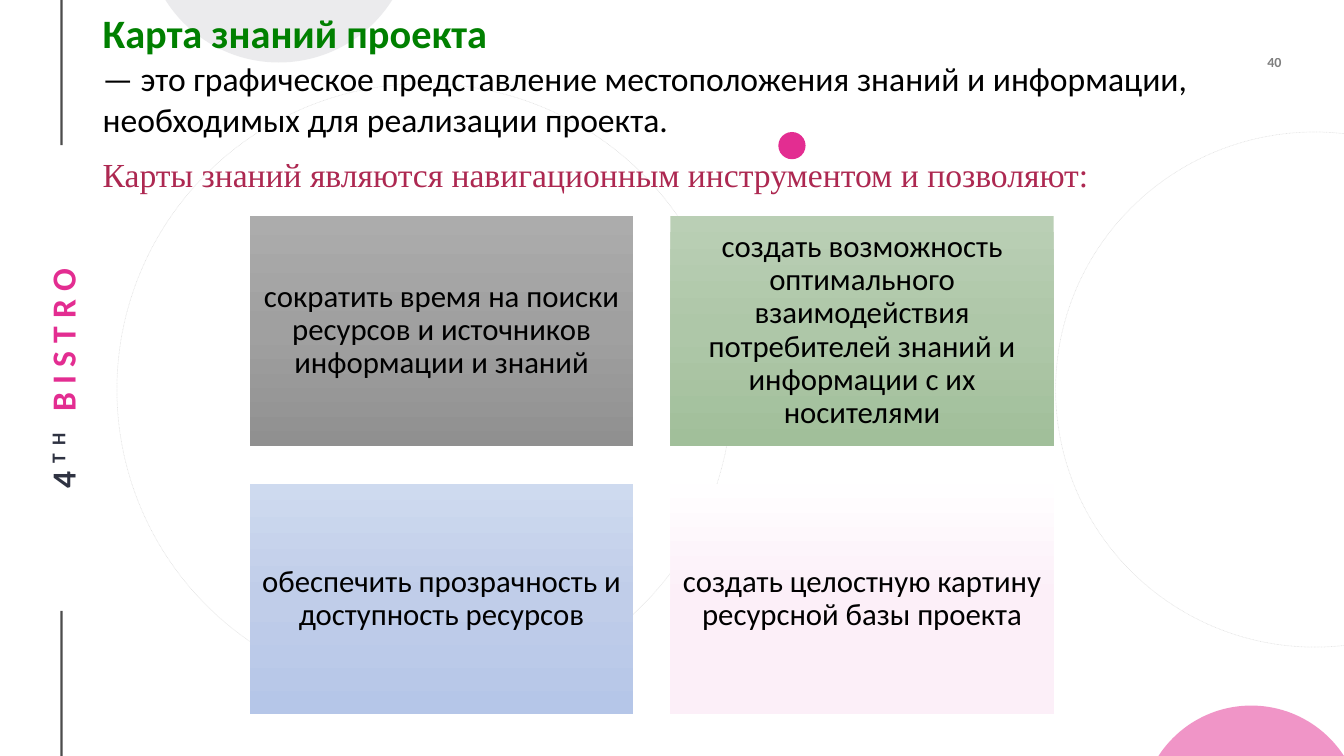
from copy import deepcopy
from math import asin, cos, sin

from lxml import etree
from pptx import Presentation
from pptx.dml.color import RGBColor
from pptx.enum.dml import MSO_LINE
from pptx.enum.shapes import MSO_CONNECTOR, MSO_SHAPE
from pptx.enum.text import MSO_ANCHOR, PP_ALIGN
from pptx.oxml.ns import qn
from pptx.util import Inches, Pt

STRAIGHT = MSO_CONNECTOR.STRAIGHT
OVAL, RECTANGLE = MSO_SHAPE.OVAL, MSO_SHAPE.RECTANGLE
TOP, MIDDLE = MSO_ANCHOR.TOP, MSO_ANCHOR.MIDDLE
LEFT, CENTER, RIGHT = PP_ALIGN.LEFT, PP_ALIGN.CENTER, PP_ALIGN.RIGHT
DOTTED = MSO_LINE.ROUND_DOT

THEME = {
    "sans": "Calibri", "serif": "Times New Roman",
    "black": "000000", "green": "008000", "wine": "AD2851",
    "pink": "E32D91", "navy": "2F3342", "mist": "D8D9DC",
    "title": 28.8, "body": 24, "card": 22, "number": 10,
}

TITLE = "Карта знаний проекта"
DEFINITION = ("— это графическое представление местоположения знаний и информации, "
              "необходимых для реализации проекта.")
LEAD = "Карты знаний являются навигационным инструментом и позволяют:"
PAGE_NUMBER = "40"
# text, colour, baseline in thousandths of a percent
BRAND = [("4", "navy", 0), ("TH ", "navy", 30000), ("BISTRO", "pink", 0)]
# text, gradient from top to bottom
CARDS = [
    ("сократить время на поиски ресурсов и источников информации и знаний",
     ("ACACAC", "A0A0A0", "909090")),
    ("создать возможность оптимального взаимодействия потребителей знаний и "
     "информации с их носителями", ("BACFB5", "AEC7A8", "A1BF9A")),
    ("обеспечить прозрачность и доступность ресурсов",
     ("CEDAEF", "C0CDE9", "B5C6E8")),
    ("создать целостную картину ресурсной базы проекта",
     ("FFFEFF", "FCEFF8", "FBEDF7")),
]
CARD_LEFT, CARD_TOP, CARD_WIDTH, CARD_HEIGHT = 2.48, 2.14, 3.8, 2.28
COLUMN_STEP, ROW_STEP, COLUMNS = 4.17, 2.66, 2
RULE_X, RULE_SPANS = 0.61, [(0, 1.44), (6.06, 7.5)]
RINGS = [(10.47, 1.31, 5.14, 5.11), (1.16, 0.83, 6.1, 6.07)]
DOT = (7.72, 1.31, 0.27, 0.27)
# chord left, chord y, chord width, signed height (negative rises), colour
DOMES = [(11.49, 7.5, 1.84, -0.5, "pink"), (1.64, 0, 2.25, 0.62, "mist")]


def rgb(name):
    return RGBColor.from_string(THEME.get(name, name))


def set_opacity(element, percent):
    color = next(element.iter(qn("a:srgbClr")))
    etree.SubElement(color, qn("a:alpha"), val=str(percent * 1000))


def add_shape(page, kind, frame):
    shape = page.shapes.add_shape(kind, *map(Inches, frame))
    shape.shadow.inherit = False
    shape.line.fill.background()
    return shape


def set_text(shape, runs, size, color, align=LEFT, anchor=TOP, margins=None,
             font="sans", bold=False, spacing=None):
    """Fill one paragraph and return its runs."""
    box = shape.text_frame
    box.word_wrap = True
    box.vertical_anchor = anchor
    if margins is not None:
        box.margin_left = box.margin_right = Inches(margins)
        box.margin_top = box.margin_bottom = Inches(margins)
    para = box.paragraphs[0]
    para.alignment = align
    para.line_spacing = spacing
    para.font.name, para.font.size = THEME[font], Pt(THEME[size])
    para.font.bold, para.font.color.rgb = bold, rgb(color)
    spans = []
    for text in runs:
        span = para.add_run()
        span.text = text
        spans.append(span)
    return spans


def add_text(page, frame, runs, *args, **options):
    box = page.shapes.add_textbox(*map(Inches, frame))
    return box, set_text(box, runs, *args, **options)


def add_rules(page):
    for top, bottom in RULE_SPANS:
        rule = page.shapes.add_connector(
            STRAIGHT, Inches(RULE_X), Inches(top), Inches(RULE_X), Inches(bottom))
        rule.line.width = Pt(1.5)
        rule.line.color.rgb = rgb("black")
        properties = rule._element.spPr
        set_opacity(properties, 70)
        etree.SubElement(properties, qn("a:effectLst"))


def add_brand(page):
    box, spans = add_text(page, (-1.69, 3.53, 4.61, 0.45), [part[0] for part in BRAND],
                          "body", "navy", CENTER, MIDDLE, 0.02, bold=True)
    box.rotation = 270
    for span, (_, color, baseline) in zip(spans, BRAND):
        span.font.color.rgb = rgb(color)
        properties = span._r.get_or_add_rPr()
        properties.set("spc", "600")
        properties.set("baseline", str(baseline))


def add_circles(page):
    for frame in RINGS:
        ring = add_shape(page, OVAL, frame)
        ring.fill.background()
        ring.line.color.rgb = rgb("black")
        ring.line.width = Pt(0.5)
        ring.line.dash_style = DOTTED
        set_opacity(ring._element.spPr, 10)
    dot = add_shape(page, OVAL, DOT)
    dot.fill.solid()
    dot.fill.fore_color.rgb = rgb("pink")


def add_dome(page, left, chord_y, width, height, color, steps=48):
    """Draw the part of a circle cut off by a slide edge."""
    rise = abs(height)
    radius = (width ** 2 / 4 + rise ** 2) / (2 * rise)
    half_angle = asin(width / 2 / radius)
    direction = height / rise
    points = []
    for step in range(steps + 1):
        angle = half_angle * (2 * step / steps - 1)
        depth = radius * (cos(angle) - cos(half_angle))
        points.append((Inches(left + width / 2 + radius * sin(angle)),
                       Inches(chord_y + direction * depth)))
    builder = page.shapes.build_freeform(*points[0])
    builder.add_line_segments(points[1:], close=True)
    dome = builder.convert_to_shape()
    dome.shadow.inherit = False
    dome.line.fill.background()
    dome.fill.solid()
    dome.fill.fore_color.rgb = rgb(color)
    set_opacity(dome._element.spPr, 50)


def add_card(page, index, text, colors):
    row, column = divmod(index, COLUMNS)
    card = add_shape(page, RECTANGLE, (CARD_LEFT + column * COLUMN_STEP,
                                       CARD_TOP + row * ROW_STEP,
                                       CARD_WIDTH, CARD_HEIGHT))
    card.fill.gradient()
    card.fill.gradient_angle = 270
    stops = next(card._element.spPr.iter(qn("a:gsLst")))
    stops.insert(1, deepcopy(stops[0]))
    for position, (stop, color) in enumerate(zip(card.fill.gradient_stops, colors)):
        stop.position = position / 2
        stop.color.rgb = rgb(color)
    set_text(card, [text], "card", "black", CENTER, MIDDLE, 0.09, spacing=0.9)


def main():
    deck = Presentation()
    deck.slide_width, deck.slide_height = Inches(13.33), Inches(7.5)
    page = deck.slides.add_slide(deck.slide_layouts[6])
    add_rules(page)
    add_brand(page)
    number, _ = add_text(page, (11.94, 0.48, 0.77, 0.27), [PAGE_NUMBER], "number",
                         "black", RIGHT, MIDDLE, 0, bold=True)
    set_opacity(number._element, 50)
    add_circles(page)
    for dome in DOMES:
        add_dome(page, *dome)
    add_text(page, (0.92, 0.13, 11.21, 0.45), [TITLE], "title", "green",
             anchor=MIDDLE, bold=True, spacing=0.9)
    add_text(page, (0.92, 0.53, 11.49, 0.91), [DEFINITION], "body", "black")
    add_text(page, (0.92, 1.48, 11.29, 0.5), [LEAD], "body", "wine", font="serif")
    for index, (text, colors) in enumerate(CARDS):
        add_card(page, index, text, colors)
    deck.save("out.pptx")


if __name__ == "__main__":
    main()
